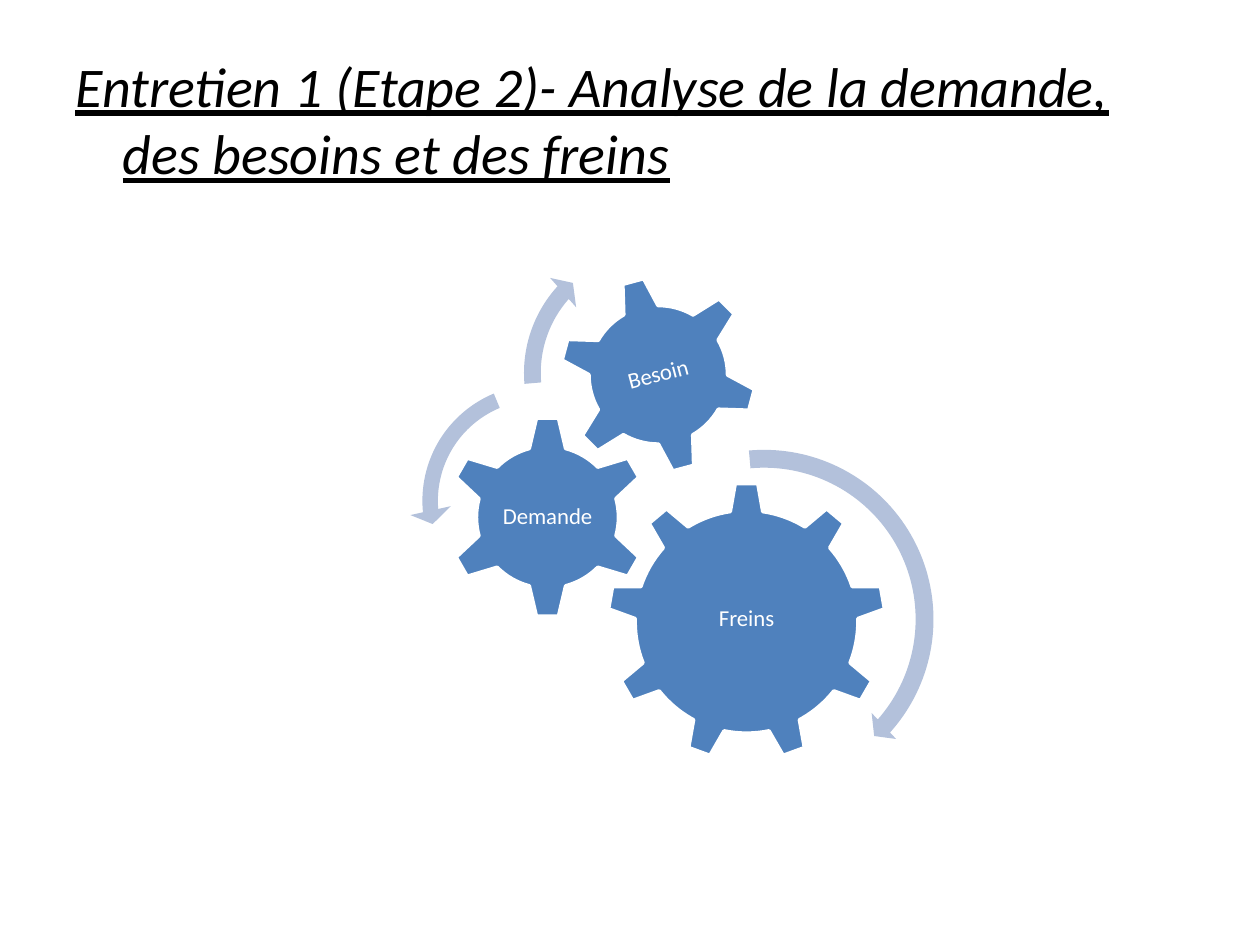
from dataclasses import dataclass

from pptx import Presentation
from pptx.dml.color import RGBColor
from pptx.enum.shapes import MSO_SHAPE
from pptx.enum.text import MSO_ANCHOR, PP_ALIGN
from pptx.util import Inches, Pt

GEAR_6 = MSO_SHAPE.GEAR_6
GEAR_9 = MSO_SHAPE.GEAR_9
ARROW = MSO_SHAPE.CIRCULAR_ARROW
LEFT_ARROW = MSO_SHAPE.LEFT_CIRCULAR_ARROW
CENTER = PP_ALIGN.CENTER
MIDDLE = MSO_ANCHOR.MIDDLE
BLANK_LAYOUT = 6

# The slide is a grid of 100 columns by 75 rows
COLUMNS, ROWS = 100, 75
CELL = Inches(0.1)


@dataclass(frozen=True)
class Theme:
    font: str = "Calibri"
    title_size: float = 32
    label_size: float = 13
    title_color: RGBColor = RGBColor(0x00, 0x00, 0x00)
    label_color: RGBColor = RGBColor(0xFF, 0xFF, 0xFF)
    gear_fill: RGBColor = RGBColor(0x4F, 0x81, 0xBD)
    gear_line: RGBColor = RGBColor(0xFF, 0xFF, 0xFF)
    arrow_fill: RGBColor = RGBColor(0xB3, 0xC1, 0xDB)


THEME = Theme()
TITLE = "Entretien 1 (Etape 2)- Analyse de la demande, des besoins et des freins"

# Label, preset, column, row, size, rotation
GEARS = [
    ("Freins", GEAR_9, 48.2, 38.3, 22.1, 0),
    ("Demande", GEAR_6, 35.4, 33, 16.1, 0),
    ("Besoin", GEAR_6, 44.4, 21.9, 15.7, 345),
]

# Preset, column, row, size, adjustments
ARROWS = [
    (ARROW, 46.5, 35, 28.3, (0.05, 2.99, 25.03, 158.91, 0.05)),
    (LEFT_ARROW, 32.5, 29.5, 20.5, (0.06, 4.3, 104.89, 148.38, 0.08)),
    (ARROW, 40.7, 18.5, 22.2, (0.06, 3.94, 133.14, 105.08, 0.07)),
]


def cells(count):
    return int(count * CELL)


def style_font(paragraph, size, color):
    for run in paragraph.runs:
        run.font.name = THEME.font
        run.font.size = Pt(size)
        run.font.color.rgb = color


def add_title(slide, text):
    box = slide.shapes.add_textbox(cells(5), cells(3.6), cells(90), cells(63.4))
    box.text_frame.word_wrap = True
    paragraph = box.text_frame.paragraphs[0]
    paragraph.text = text
    paragraph.space_before = Pt(0.2 * THEME.title_size)
    style_font(paragraph, THEME.title_size, THEME.title_color)
    font = paragraph.runs[0].font
    font.italic = font.underline = True
    # Hanging indent
    indent = cells(3.75)
    properties = paragraph._p.get_or_add_pPr()
    properties.set("marL", str(indent))
    properties.set("indent", str(-indent))


def add_square_shape(slide, preset, column, row, size, fill):
    shape = slide.shapes.add_shape(
        preset, cells(column), cells(row), cells(size), cells(size))
    shape.shadow.inherit = False
    shape.fill.solid()
    shape.fill.fore_color.rgb = fill
    return shape


def add_gear(slide, label, preset, column, row, size, rotation):
    gear = add_square_shape(slide, preset, column, row, size, THEME.gear_fill)
    gear.rotation = rotation
    gear.line.color.rgb = THEME.gear_line
    gear.line.width = Pt(2)
    frame = gear.text_frame
    frame.text = label
    frame.word_wrap = False
    frame.vertical_anchor = MIDDLE
    frame.margin_left = frame.margin_right = cells(0.2)
    frame.margin_top = frame.margin_bottom = cells(0.2)
    paragraph = frame.paragraphs[0]
    paragraph.alignment = CENTER
    paragraph.line_spacing = 0.9
    style_font(paragraph, THEME.label_size, THEME.label_color)


def add_arrow(slide, preset, column, row, size, adjustments):
    arrow = add_square_shape(slide, preset, column, row, size, THEME.arrow_fill)
    arrow.line.fill.background()
    for index, value in enumerate(adjustments):
        arrow.adjustments[index] = value


def main():
    presentation = Presentation()
    presentation.slide_width = cells(COLUMNS)
    presentation.slide_height = cells(ROWS)
    slide = presentation.slides.add_slide(presentation.slide_layouts[BLANK_LAYOUT])

    add_title(slide, TITLE)
    # Meshing gears, then the arrows showing how they turn
    for gear in GEARS:
        add_gear(slide, *gear)
    for arrow in ARROWS:
        add_arrow(slide, *arrow)

    presentation.save("out.pptx")


if __name__ == "__main__":
    main()
